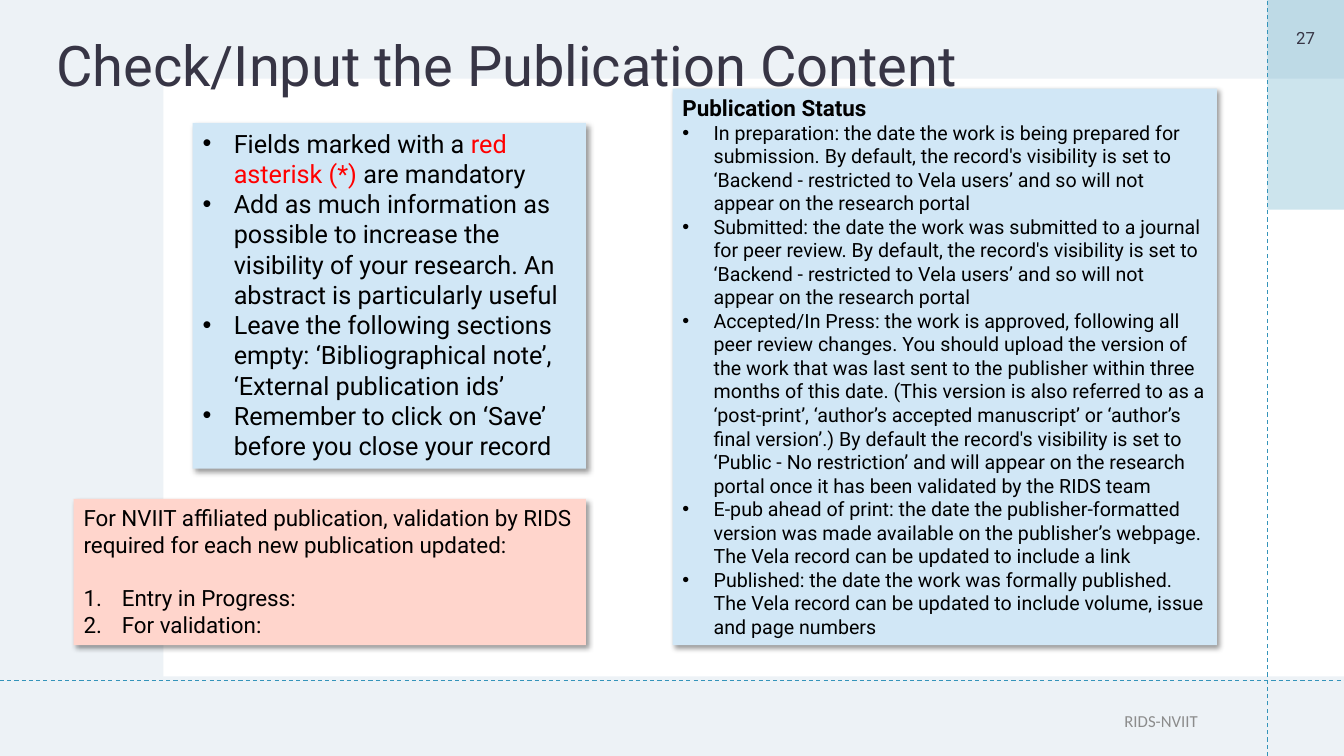
"""Build the slide on checking and entering publication content."""
from dataclasses import dataclass

from lxml.etree import SubElement
from pptx import Presentation
from pptx.dml.color import RGBColor
from pptx.enum.dml import MSO_LINE
from pptx.enum.shapes import MSO_CONNECTOR, MSO_SHAPE
from pptx.enum.text import MSO_ANCHOR, MSO_AUTO_SIZE, PP_ALIGN
from pptx.oxml.ns import qn
from pptx.util import Inches, Pt

TITLE = "Check/Input the Publication Content"
PAGE_NUMBER = "27"
FOOTER = "RIDS-NVIIT"
BULLET, NUMBER = "bullet", "number"

FIELDS = [
    (BULLET, ["Fields marked with a ", ("red asterisk (*) ",), "are mandatory"]),
    (BULLET, ["Add as much information as possible to increase the visibility of your research. "
              "An abstract is particularly useful"]),
    (BULLET, ["Leave the following sections empty: ‘Bibliographical note’, ‘External publication ids’"]),
    (BULLET, ["Remember to click on ‘Save’ before you close your record"]),
]
STATUS = [
    ("heading", ["Publication Status"]),
    (BULLET, ["In preparation: the date the work is being prepared for submission. By default, the record's "
              "visibility is set to ‘Backend - restricted to Vela users’ and so will not appear on the "
              "research portal"]),
    (BULLET, ["Submitted: the date the work was submitted to a journal for peer review. By default, the "
              "record's visibility is set to ‘Backend - restricted to Vela users’ and so will not appear on "
              "the research portal"]),
    (BULLET, ["Accepted/In Press: the work is approved, following all peer review changes. You should upload "
              "the version of the work that was last sent to the publisher within three months of this date. "
              "(This version is also referred to as a ‘post-print’, ‘author’s accepted manuscript’ or "
              "‘author’s final version’.) By default the record's visibility is set to "
              "‘Public - No restriction’ and will appear on the research portal once it has been validated "
              "by the RIDS team"]),
    (BULLET, ["E-pub ahead of print: the date the publisher-formatted version was made available on the "
              "publisher’s webpage. The Vela record can be updated to include a link"]),
    (BULLET, ["Published: the date the work was formally published. The Vela record can be updated to "
              "include volume, issue and page numbers"]),
]
VALIDATION = [
    ("plain", ["For NVIIT affiliated publication, validation by RIDS required for each new publication updated:"]),
    (NUMBER, ["Entry in Progress:"]),
    (NUMBER, ["For validation:"]),
]


@dataclass(frozen=True)
class Theme:
    font: str = "Roboto"
    footer_font: str = "Calibri"
    ink: str = "373545"
    black: str = "000000"
    red: str = "FF0000"
    grey: str = "8C8C8C"
    white: str = "FFFFFF"
    backdrop: str = "CEDBE6"
    accent: str = "3494BA"
    blue_card: str = "D1E7F6"
    pink_card: str = "FFD5CC"
    title_size: int = 40
    large: int = 18
    medium: int = 16
    body: int = 14
    small: int = 12


THEME = Theme()
WIDTH, HEIGHT = Inches(13.33), Inches(7.5)
RAIL, FLOOR = 94.3, 90
LEFT_CARDS_END, CARDS_BOTTOM = 43.59, 85.33
LIST_STYLES = {BULLET: (0.31, "buChar", {"char": "•"}), NUMBER: (0.38, "buAutoNum", {"type": "arabicPeriod"})}

deck = Presentation()
deck.slide_width, deck.slide_height = WIDTH, HEIGHT
page = deck.slides.add_slide(deck.slide_layouts[6])


def across(percent):
    return round(WIDTH * percent / 100)


def down(percent):
    return round(HEIGHT * percent / 100)


def frame(left, top, right, bottom):
    return across(left), down(top), across(right - left), down(bottom - top)


def add_block(edges, colour, opacity=100):
    block = page.shapes.add_shape(MSO_SHAPE.RECTANGLE, *frame(*edges))
    block.shadow.inherit = False
    block.fill.solid()
    block.fill.fore_color.rgb = RGBColor.from_string(colour)
    block.line.fill.background()
    if opacity < 100:
        tint = block._element.spPr.find(qn("a:solidFill"))[0]
        SubElement(tint, qn("a:alpha"), val=str(opacity * 1000))
    return block


def add_guide(*ends):
    guide = page.shapes.add_connector(MSO_CONNECTOR.STRAIGHT, *ends)
    guide.line.color.rgb = RGBColor.from_string(THEME.accent)
    guide.line.width = Pt(0.75)
    guide.line.dash_style = MSO_LINE.DASH
    SubElement(guide._element.spPr, qn("a:effectLst"))


def add_span(para, text, size, colour, font=THEME.font, bold=False):
    span = para.add_run()
    span.text = text
    span.font.name, span.font.size, span.font.bold = font, Pt(size), bold
    span.font.color.rgb = RGBColor.from_string(colour)


def add_label(edges, text, size, colour, align, font=THEME.font):
    box = page.shapes.add_textbox(*frame(*edges))
    box.text_frame.word_wrap = True
    box.text_frame.vertical_anchor = MSO_ANCHOR.MIDDLE
    para = box.text_frame.paragraphs[0]
    para.alignment = align
    add_span(para, text, size, colour, font)
    return para


def set_list_style(para, kind):
    indent, tag, marker = LIST_STYLES[kind]
    properties = para._p.get_or_add_pPr()
    properties.set("marL", str(Inches(indent)))
    properties.set("indent", str(-Inches(indent)))
    if kind == BULLET:
        SubElement(properties, qn("a:buFont"), typeface="Arial")
    SubElement(properties, qn(f"a:{tag}"), **marker)


def add_card(edges, colour, content, size):
    card = add_block(edges, colour)
    effects = card._element.spPr.find(qn("a:effectLst"))
    shadow = SubElement(effects, qn("a:outerShdw"), blurRad=str(Pt(4)), dist=str(Pt(3)),
                        dir=str(45 * 60000), algn="tl", rotWithShape="0")
    shade = SubElement(shadow, qn("a:srgbClr"), val=THEME.black)
    SubElement(shade, qn("a:alpha"), val="40000")
    text = card.text_frame
    text.word_wrap = True
    text.auto_size = MSO_AUTO_SIZE.SHAPE_TO_FIT_TEXT
    text.vertical_anchor = MSO_ANCHOR.TOP
    previous = None
    for kind, spans in content:
        para = text.add_paragraph() if previous else text.paragraphs[0]
        para.alignment = PP_ALIGN.LEFT
        if kind == NUMBER and previous != NUMBER:
            para.space_before = Pt(19)
        if kind in LIST_STYLES:
            set_list_style(para, kind)
        heading = kind == "heading"
        for span in spans:
            marked = isinstance(span, tuple)
            add_span(para, span[0] if marked else span, THEME.medium if heading else size,
                     THEME.red if marked else THEME.black, bold=heading)
        previous = kind


def build():
    add_block((0, 0, 100, 100), THEME.backdrop, 35)
    add_block((12.15, 10.4, 100, 89.47), THEME.white)
    add_block((RAIL, 0, 100, 27.73), THEME.accent, 25)
    add_guide(across(RAIL), HEIGHT, across(RAIL), 0)
    add_guide(0, down(FLOOR), WIDTH, down(FLOOR))
    title = add_label((3.45, 1.73, 89.95, 16.27), TITLE, THEME.title_size, THEME.ink, PP_ALIGN.LEFT)
    title.line_spacing = 0.9
    add_label((RAIL, 0, 100, 10), PAGE_NUMBER, THEME.small, THEME.ink, PP_ALIGN.CENTER)
    add_card((14.33, 16.27, LEFT_CARDS_END, 62), THEME.blue_card, FIELDS, THEME.large)
    add_card((50.04, 11.73, 90.55, CARDS_BOTTOM), THEME.blue_card, STATUS, THEME.body)
    add_card((5.48, 66, LEFT_CARDS_END, CARDS_BOTTOM), THEME.pink_card, VALIDATION, THEME.medium)
    footer = add_label((30.83, 90.67, 89.87, 100), FOOTER, THEME.small, THEME.grey,
                       PP_ALIGN.RIGHT, THEME.footer_font)
    footer.space_after = Pt(6)
    deck.save("out.pptx")


if __name__ == "__main__":
    build()
